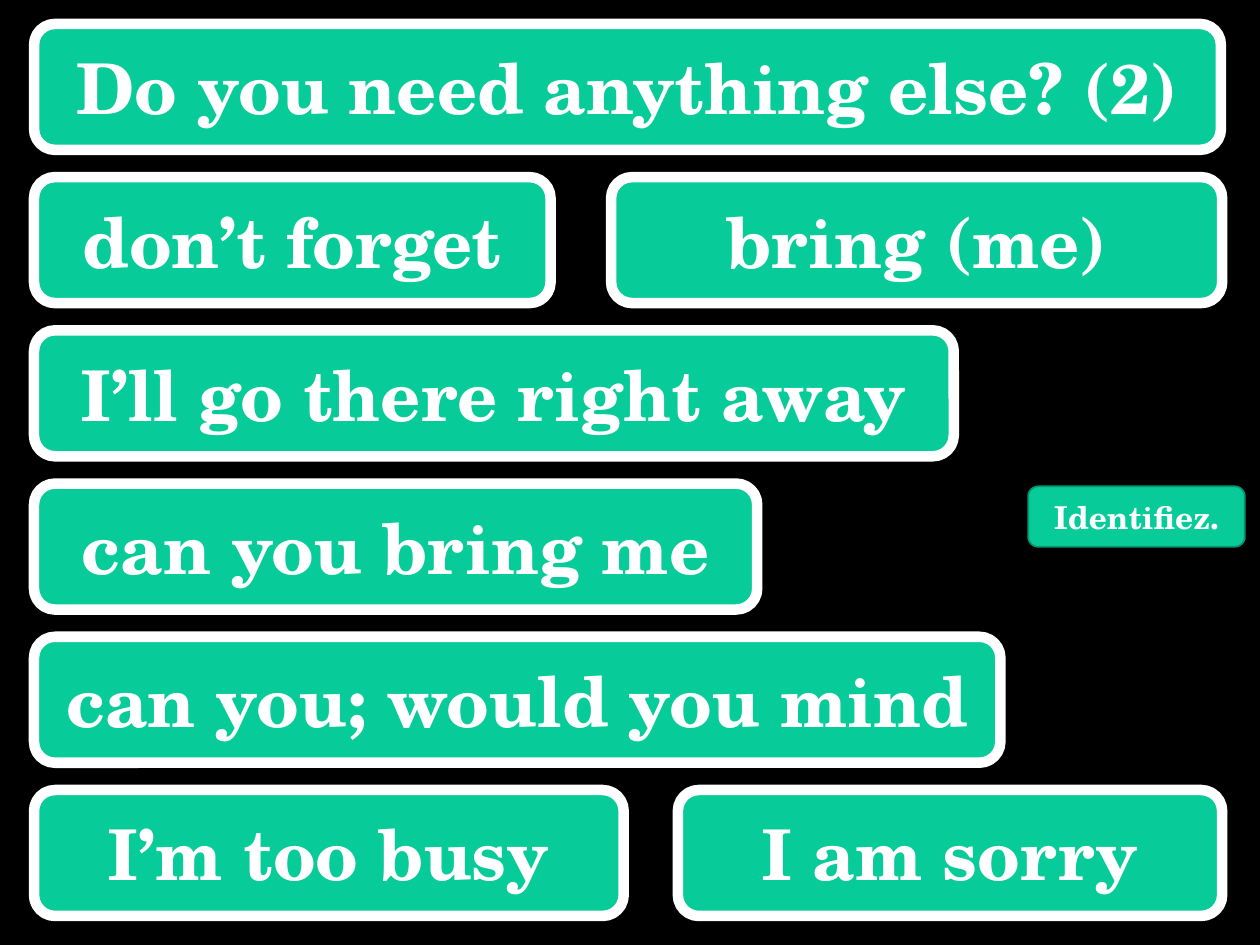
from pptx import Presentation
from pptx.dml.color import RGBColor
from pptx.enum.shapes import MSO_SHAPE
from pptx.enum.text import MSO_ANCHOR, PP_ALIGN
from pptx.util import Inches, Pt

BLACK = RGBColor(0x00, 0x00, 0x00)
WHITE = RGBColor(0xFF, 0xFF, 0xFF)
GREEN = RGBColor(0x07, 0xCB, 0x98)
DARK_GREEN = RGBColor(0x05, 0x96, 0x70)
FONT = "TeX Gyre Schola"

prs = Presentation()
prs.slide_width = Inches(10)
prs.slide_height = Inches(7.5)
slide = prs.slides.add_slide(prs.slide_layouts[6])
slide.background.fill.solid()
slide.background.fill.fore_color.rgb = BLACK


def add_card(text, left, top, width, height=1, size=40, border=WHITE, weight=6):
    card = slide.shapes.add_shape(
        MSO_SHAPE.ROUNDED_RECTANGLE,
        Inches(left), Inches(top), Inches(width), Inches(height))
    card.shadow.inherit = False
    card.fill.solid()
    card.fill.fore_color.rgb = GREEN
    card.line.color.rgb = border
    card.line.width = Pt(weight)
    frame = card.text_frame
    frame.word_wrap = True
    frame.vertical_anchor = MSO_ANCHOR.MIDDLE
    frame.text = text
    line = frame.paragraphs[0]
    line.alignment = PP_ALIGN.CENTER
    font = line.runs[0].font
    font.name = FONT
    font.size = Pt(size)
    font.bold = True
    font.color.rgb = WHITE


# Each row lists its cards as (text, left, width)
LEFT = 0.27
TOP = 0.19
LAST_TOP = 6.27
rows = [
    [("Do you need anything else? (2)", LEFT, 9.42)],
    [("don’t forget", LEFT, 4.1), ("bring (me)", 4.85, 4.85)],
    [("I’ll go there right away", LEFT, 7.3)],
    [("can you bring me", LEFT, 5.74)],
    [("can you; would you mind", LEFT, 7.67)],
    [("I’m too busy", LEFT, 4.68), ("I am sorry", 5.38, 4.32)],
]
pitch = (LAST_TOP - TOP) / (len(rows) - 1)
for index, row in enumerate(rows):
    for text, left, width in row:
        add_card(text, left, TOP + index * pitch, width)

add_card("Identifiez.", 8.16, 3.86, 1.72, height=0.48, size=18,
         border=DARK_GREEN, weight=1)

prs.save("out.pptx")
